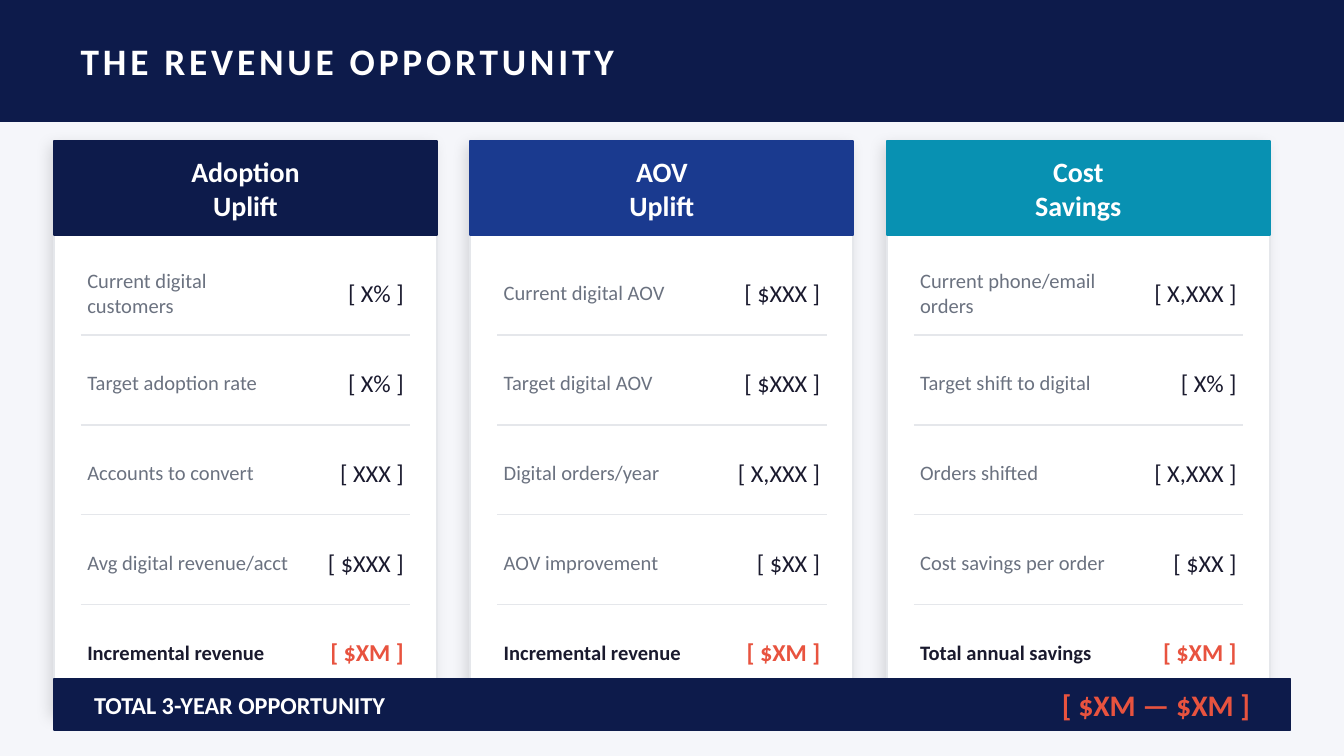
from lxml import etree
from pptx import Presentation
from pptx.dml.color import RGBColor
from pptx.enum.shapes import MSO_CONNECTOR, MSO_SHAPE
from pptx.enum.text import MSO_ANCHOR, MSO_AUTO_SIZE, PP_ALIGN
from pptx.oxml import parse_xml
from pptx.oxml.ns import qn
from pptx.util import Cm, Pt

RECTANGLE = MSO_SHAPE.RECTANGLE
STRAIGHT = MSO_CONNECTOR.STRAIGHT
MIDDLE = MSO_ANCHOR.MIDDLE
NO_FIT = MSO_AUTO_SIZE.NONE
LEFT, CENTER, RIGHT = PP_ALIGN.LEFT, PP_ALIGN.CENTER, PP_ALIGN.RIGHT
TITLE_ONLY = 5
FONT = "Calibri"

COLORS = {
    "background": "F5F6FA",
    "navy": "0D1B4B",
    "blue": "1A3A8F",
    "teal": "0891B2",
    "white": "FFFFFF",
    "rule": "E5E7EB",
    "label": "6B7280",
    "ink": "1A1A2E",
    "accent": "E8533F",
}

CARDS = [
    (["Adoption", "Uplift"], "navy", [
        ("Current digital customers", "[ X% ]"),
        ("Target adoption rate", "[ X% ]"),
        ("Accounts to convert", "[ XXX ]"),
        ("Avg digital revenue/acct", "[ $XXX ]"),
        ("Incremental revenue", "[ $XM ]"),
    ]),
    (["AOV", "Uplift"], "blue", [
        ("Current digital AOV", "[ $XXX ]"),
        ("Target digital AOV", "[ $XXX ]"),
        ("Digital orders/year", "[ X,XXX ]"),
        ("AOV improvement", "[ $XX ]"),
        ("Incremental revenue", "[ $XM ]"),
    ]),
    (["Cost", "Savings"], "teal", [
        ("Current phone/email orders", "[ X,XXX ]"),
        ("Target shift to digital", "[ X% ]"),
        ("Orders shifted", "[ X,XXX ]"),
        ("Cost savings per order", "[ $XX ]"),
        ("Total annual savings", "[ $XM ]"),
    ]),
]

SHADOW = (
    '<a:effectLst xmlns:a="http://schemas.openxmlformats.org/drawingml/2006/main">'
    '<a:outerShdw blurRad="101600" dist="38100" dir="8100000" algn="bl" rotWithShape="0">'
    '<a:srgbClr val="000000"><a:alpha val="12000"/></a:srgbClr>'
    "</a:outerShdw></a:effectLst>"
)


def color(name):
    return RGBColor.from_string(COLORS[name])


def add_rect(page, left, top, width, height, fill, line):
    shape = page.shapes.add_shape(RECTANGLE, Cm(left), Cm(top), Cm(width), Cm(height))
    shape.shadow.inherit = False
    shape.fill.solid()
    shape.fill.fore_color.rgb = color(fill)
    shape.line.color.rgb = color(line)
    shape.line.width = Pt(1)
    return shape


def write_text(box, lines, size, ink, bold, align):
    frame = box.text_frame
    frame.word_wrap = True
    frame.auto_size = NO_FIT
    frame.vertical_anchor = MIDDLE
    for index, line in enumerate(lines):
        para = frame.add_paragraph() if index else frame.paragraphs[0]
        para.alignment = align
        span = para.add_run()
        span.text = line
        span.font.name = FONT
        span.font.size = Pt(size)
        span.font.bold = bold
        span.font.color.rgb = color(ink)


def add_text(page, left, top, width, height, lines, size, ink, bold=False, align=LEFT):
    box = page.shapes.add_textbox(Cm(left), Cm(top), Cm(width), Cm(height))
    write_text(box, lines, size, ink, bold, align)


def add_divider(page, left, top, width):
    line = page.shapes.add_connector(STRAIGHT, Cm(left), Cm(top), Cm(left + width), Cm(top))
    line.line.color.rgb = color("rule")
    line.line.width = Pt(0.75)
    etree.SubElement(line.element.spPr, qn("a:effectLst"))


def add_title_bar(page, left, top, width, height):
    add_rect(page, left, top, width, height, "navy", "navy")
    title = page.shapes.title
    title.element.getparent().append(title.element)
    title.left, title.top = Cm(left + 1.27), Cm(top)
    title.width, title.height = Cm(width - 2.54), Cm(height)
    write_text(title, ["THE REVENUE OPPORTUNITY"], 20, "white", True, LEFT)
    span = title.text_frame.paragraphs[0].runs[0]
    span.font._element.set("spc", "200")


def add_row(page, left, top, width, label, value, is_total):
    value_width = 2.16
    label_width = width - value_width
    label_ink, value_ink = ("ink", "accent") if is_total else ("label", "ink")
    add_text(page, left, top, label_width, 1.4, [label], 11, label_ink, is_total)
    add_text(page, left + label_width, top, value_width, 1.4, [value], 13,
             value_ink, is_total, RIGHT)
    if not is_total:
        add_divider(page, left + 0.13, top + 1.5, width - 0.26)


def add_card(page, left, top, width, height, heading, fill, rows):
    header_height = 1.78
    card = add_rect(page, left, top, width, height, "white", "rule")
    properties = card.element.spPr
    properties.replace(properties.find(qn("a:effectLst")), parse_xml(SHADOW))
    add_rect(page, left, top, width, header_height, fill, fill)
    add_text(page, left + 0.25, top, width - 0.5, header_height, heading, 15,
             "white", True, CENTER)
    for index, (label, value) in enumerate(rows):
        row_top = top + 2.16 + index * 1.7
        add_row(page, left + 0.38, row_top, width - 0.76, label, value,
                index == len(rows) - 1)


def add_total_bar(page, left, top, width, height):
    add_rect(page, left, top, width, height, "navy", "navy")
    add_text(page, left + 0.51, top, 12.7, height, ["TOTAL 3-YEAR OPPORTUNITY"], 13,
             "white", True)
    add_text(page, left + 13.21, top, 9.65, height, ["[ $XM — $XM ]"], 16,
             "accent", True, RIGHT)


def main():
    deck = Presentation()
    deck.slide_width, deck.slide_height = Cm(25.4), Cm(14.29)
    page = deck.slides.add_slide(deck.slide_layouts[TITLE_ONLY])
    page.background.fill.solid()
    page.background.fill.fore_color.rgb = color("background")

    add_title_bar(page, 0, 0, 25.4, 2.29)
    for index, (heading, fill, rows) in enumerate(CARDS):
        add_card(page, 1.02 + index * 7.87, 2.67, 7.24, 10.8, heading, fill, rows)
    add_total_bar(page, 1.02, 12.83, 23.37, 0.97)
    deck.save("out.pptx")


if __name__ == "__main__":
    main()
